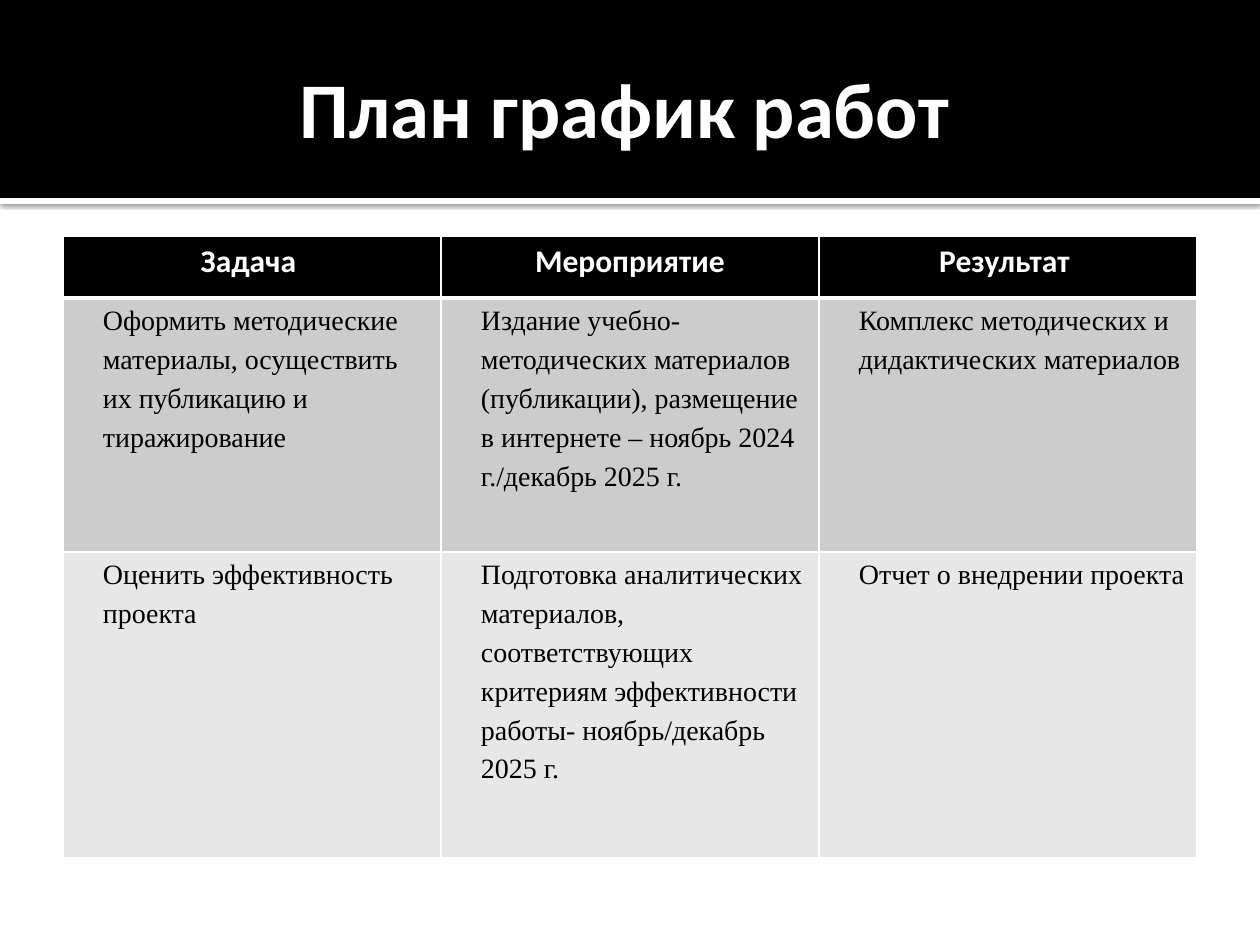
from lxml.etree import SubElement
from pptx import Presentation
from pptx.dml.color import RGBColor
from pptx.enum.shapes import MSO_SHAPE
from pptx.enum.text import MSO_ANCHOR, PP_ALIGN
from pptx.oxml.ns import qn
from pptx.util import Emu, Pt

PX_PER_INCH = 126
SLIDE_WIDTH, SLIDE_HEIGHT = 1260, 945
BAND_HEIGHT = 198
BLACK, WHITE = "000000", "FFFFFF"
COLUMN_WIDTH = 378
ROW_HEIGHTS = (62, 254, 306)
ROW_FILLS = (BLACK, "CCCCCC", "E7E7E7")
ROWS = (
    ("Задача ", "Мероприятие", "Результат "),
    (
        "Оформить методические материалы, осуществить их публикацию и тиражирование",
        "Издание учебно-методических материалов (публикации), размещение в интернете – ноябрь 2024 г./декабрь 2025 г.",
        "Комплекс методических и дидактических материалов",
    ),
    (
        "Оценить эффективность проекта",
        "Подготовка аналитических материалов, соответствующих критериям эффективности работы- ноябрь/декабрь 2025 г.",
        "Отчет о внедрении проекта",
    ),
)


def px(length):
    return Emu(round(length * 914400 / PX_PER_INCH))


def color(hex_code):
    return RGBColor.from_string(hex_code)


def set_fill(target, hex_code):
    target.fill.solid()
    target.fill.fore_color.rgb = color(hex_code)


def set_margins(frame, left, top, right, bottom):
    frame.margin_left, frame.margin_top = px(left), px(top)
    frame.margin_right, frame.margin_bottom = px(right), px(bottom)


def write_text(frame, text, size, font="Calibri", hex_code=WHITE, bold=True,
               align=PP_ALIGN.CENTER, line_spacing=1.0, indent=0):
    paragraph = frame.paragraphs[0]
    paragraph.alignment = align
    paragraph.line_spacing = line_spacing
    paragraph._p.get_or_add_pPr().set("marL", str(px(indent)))
    run = paragraph.add_run()
    run.text = text
    run.font.name = font
    run.font.size = Pt(size)
    run.font.bold = bold
    run.font.color.rgb = color(hex_code)


def add_bar(slide, top, height, hex_code):
    bar = slide.shapes.add_shape(
        MSO_SHAPE.RECTANGLE, 0, px(top), px(SLIDE_WIDTH), px(height))
    bar.shadow.inherit = False
    set_fill(bar, hex_code)
    bar.line.fill.background()
    return bar


def add_shadow(shape):
    """Cast a soft shadow straight down."""
    effects = shape.element.spPr.find(qn("a:effectLst"))
    shadow = SubElement(effects, qn("a:outerShdw"), blurRad=str(Pt(2.5)),
                        dist=str(Pt(0.8)), dir="5400000", rotWithShape="0")
    shade = SubElement(shadow, qn("a:srgbClr"), val=BLACK)
    SubElement(shade, qn("a:alpha"), val="60000")


def format_title(slide, text):
    title = slide.shapes.title
    title.left, title.top = px(63), px(21)
    title.width, title.height = px(1134), px(173)
    frame = title.text_frame
    frame.word_wrap = True
    frame.vertical_anchor = MSO_ANCHOR.MIDDLE
    set_margins(frame, 13, 6, 6, 6)
    write_text(frame, text, 45)
    # Bring the title in front of the black band.
    title.element.getparent().append(title.element)


def set_borders(cell, **widths):
    """Draw white borders; widths are points keyed by side: L, R, T, B."""
    properties = cell._tc.get_or_add_tcPr()
    for side, width in widths.items():
        line = SubElement(properties, qn(f"a:ln{side}"), w=str(Pt(width)))
        fill = SubElement(line, qn("a:solidFill"))
        SubElement(fill, qn("a:srgbClr"), val=WHITE)


def add_plan_table(slide):
    columns = len(ROWS[0])
    table = slide.shapes.add_table(
        len(ROWS), columns, px(63), px(236),
        px(COLUMN_WIDTH * columns), px(sum(ROW_HEIGHTS))).table
    table.horz_banding = False
    for column in table.columns:
        column.width = px(COLUMN_WIDTH)
    for row_index, texts in enumerate(ROWS):
        table.rows[row_index].height = px(ROW_HEIGHTS[row_index])
        for column_index, text in enumerate(texts):
            cell = table.cell(row_index, column_index)
            set_borders(cell, L=1, R=1, T=3 if row_index == 1 else 1,
                        B=3 if row_index == 0 else 1)
            set_fill(cell, ROW_FILLS[row_index])
            if row_index == 0:
                write_text(cell.text_frame, text, 18)
            else:
                set_margins(cell, 9, 0, 9, 0)
                write_text(cell.text_frame, text, 16, font="Times New Roman",
                           hex_code=BLACK, bold=False, align=PP_ALIGN.LEFT,
                           line_spacing=1.25, indent=31)


def main():
    presentation = Presentation()
    presentation.slide_width = px(SLIDE_WIDTH)
    presentation.slide_height = px(SLIDE_HEIGHT)
    slide = presentation.slides.add_slide(presentation.slide_layouts[5])
    add_shadow(add_bar(slide, BAND_HEIGHT, 6, WHITE))
    add_bar(slide, 0, BAND_HEIGHT, BLACK)
    format_title(slide, "План график работ ")
    add_plan_table(slide)
    presentation.save("out.pptx")


if __name__ == "__main__":
    main()
